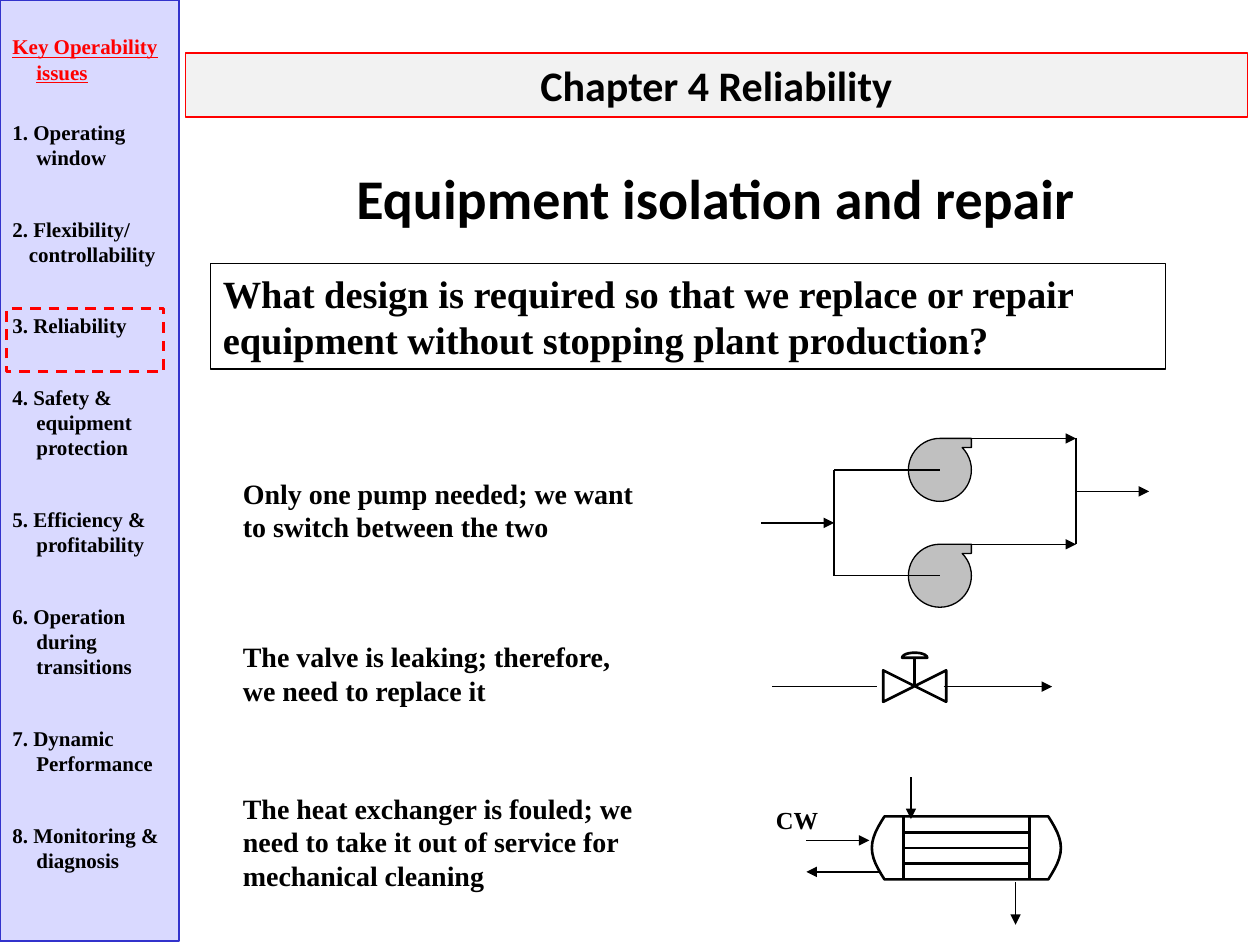
import collections
import math

import lxml.etree
import pptx
import pptx.dml.color
import pptx.enum.dml
import pptx.enum.shapes
import pptx.enum.text
import pptx.oxml.ns
import pptx.util

Inches = pptx.util.Inches
SHAPES = pptx.enum.shapes.MSO_SHAPE
SERIF, SANS = "Times New Roman", "Calibri"
BLACK, RED, WHITE = "000000", "FF0000", "FFFFFF"

# A region of the page, in inches
Box = collections.namedtuple("Box", "left top width height")


def color(hex_string):
    return pptx.dml.color.RGBColor.from_string(hex_string)


def style_outline(shape, fill, line, weight):
    shape.shadow.inherit = False
    if fill:
        shape.fill.solid()
        shape.fill.fore_color.rgb = color(fill)
    else:
        shape.fill.background()
    shape.line.color.rgb = color(line)
    shape.line.width = pptx.util.Pt(weight)


def add_preset(page, kind, box, fill=None, line=BLACK, weight=0.75):
    shape = page.shapes.add_shape(kind, *map(Inches, box))
    style_outline(shape, fill, line, weight)
    return shape


def add_outline(page, box, points, weight=1.5):
    """Draw a closed white outline; points are offsets from the box corner."""
    corners = [(Inches(box.left + x), Inches(box.top + y)) for x, y in points]
    builder = page.shapes.build_freeform(*corners[0])
    builder.add_line_segments(corners[1:], close=True)
    style_outline(builder.convert_to_shape(), WHITE, BLACK, weight)


def add_line(page, box, start_x, start_y, end_x, end_y, arrow=False, weight=0.75):
    """Draw a line between two offsets from the box corner."""
    line = page.shapes.add_connector(
        pptx.enum.shapes.MSO_CONNECTOR.STRAIGHT,
        Inches(box.left + start_x), Inches(box.top + start_y),
        Inches(box.left + end_x), Inches(box.top + end_y))
    line.line.color.rgb = color(BLACK)
    line.line.width = pptx.util.Pt(weight)
    if arrow:
        head = lxml.etree.SubElement(line.line._get_or_add_ln(), pptx.oxml.ns.qn("a:tailEnd"))
        head.set("type", "triangle")
    lxml.etree.SubElement(line._element.spPr, pptx.oxml.ns.qn("a:effectLst"))


def format_para(para, size, font, text_color=BLACK, align=pptx.enum.text.PP_ALIGN.LEFT):
    para.alignment = align
    for span in para.runs:
        span.font.size = pptx.util.Pt(size)
        span.font.name = font
        span.font.bold = True
        span.font.color.rgb = color(text_color)


def set_text(shape, text, size, font=SERIF, align=pptx.enum.text.PP_ALIGN.LEFT):
    frame = shape.text_frame
    frame.word_wrap = True
    frame.vertical_anchor = pptx.enum.text.MSO_ANCHOR.TOP
    frame.text = text
    format_para(frame.paragraphs[0], size, font, align=align)


def add_label(page, box, text, size, **style):
    set_text(page.shapes.add_textbox(*map(Inches, box)), text, size, **style)


def draw_sidebar(page, box):
    # Text, space before in points, left margin and first-line indent in inches
    issues = [
        ("Key Operability issues", 0, 0.19, -0.19),
        ("1. Operating window", 20, 0.19, -0.19),
        ("2. Flexibility/", 26.5, 0.19, -0.19),
        ("controllability", 0, 0.13, 0),
    ] + [(text, 26.5, 0.19, -0.19) for text in (
        "3. Reliability", "4. Safety & equipment protection",
        "5. Efficiency & profitability", "6. Operation during transitions",
        "7. Dynamic Performance", "8. Monitoring & diagnosis")]
    panel = add_preset(page, SHAPES.RECTANGLE, box, "D9D9FF", "3333CC")
    frame = panel.text_frame
    frame.word_wrap = True
    frame.vertical_anchor = pptx.enum.text.MSO_ANCHOR.TOP
    frame.margin_top = Inches(0.27)
    frame.text = "\n".join(text for text, *_ in issues)
    for para, (_, gap, margin, indent) in zip(frame.paragraphs, issues):
        format_para(para, 12, SERIF)
        para.space_before = pptx.util.Pt(gap)
        properties = para._p.get_or_add_pPr()
        properties.set("marL", str(Inches(margin)))
        properties.set("indent", str(Inches(indent)))
    heading = frame.paragraphs[0].runs[0].font
    heading.color.rgb = color(RED)
    heading.underline = True

    # Dashed frame around the current chapter
    marker = add_preset(page, SHAPES.RECTANGLE,
                        Box(box.left + 0.05, box.top + 2.45, 1.25, 0.5), None, RED, 1.5)
    marker.line.dash_style = pptx.enum.dml.MSO_LINE.DASH


def draw_header(page, box):
    center = pptx.enum.text.PP_ALIGN.CENTER
    banner = add_preset(page, SHAPES.RECTANGLE, box._replace(height=0.51), "F2F2F2", RED)
    set_text(banner, "Chapter 4 Reliability", 24, SANS, center)
    add_label(page, Box(box.left + 1, box.top + 0.83, 6.42, 0.64),
              "Equipment isolation and repair", 32, font=SANS, align=center)


def draw_pumps(page, box):
    for top in (0, 0.84):
        pump = add_preset(page, SHAPES.FLOWCHART_SEQUENTIAL_ACCESS_STORAGE,
                          Box(box.left + 1.17, box.top + top, 0.5, 0.5), "C0C0C0")
        pump._element.spPr.xfrm.set("flipV", "1")
        add_line(page, box, 0.58, top + 0.25, 1.42, top + 0.25)
        add_line(page, box, 1.67, top, 2.5, top, arrow=True)
    # Shared inlet and outlet
    add_line(page, box, 0.58, 1.09, 0.58, 0.25)
    add_line(page, box, 0, 0.67, 0.58, 0.67, arrow=True)
    add_line(page, box, 2.5, 0.84, 2.5, 0)
    add_line(page, box, 2.5, 0.42, 3.08, 0.42, arrow=True)


def draw_valve(page, box):
    # Body, dome and stem
    add_outline(page, box, [(0.88, 0.14), (1.38, 0.39), (1.38, 0.14), (0.88, 0.39)])
    angles = [math.pi * step / 11 for step in range(12)]
    add_outline(page, box, [(1.13 - 0.1 * math.cos(angle), 0.04 - 0.04 * math.sin(angle))
                            for angle in angles])
    add_line(page, box, 1.13, 0.26, 1.13, 0.04, weight=1.5)
    # Pipe
    add_line(page, box, 0, 0.27, 0.83, 0.27)
    add_line(page, box, 1.36, 0.27, 2.22, 0.27, arrow=True)


def draw_exchanger(page, box):
    # Shell with a rounded cap at each end
    steps = [step / 12 for step in range(13)]
    left_cap = [(0.96 - 0.1 * math.sin(math.pi * t), 0.31 + 0.5 * t) for t in steps]
    right_cap = [(2.26 + 0.1 * math.sin(math.pi * t), 0.81 - 0.5 * t) for t in steps]
    add_outline(page, box, left_cap + right_cap)
    # Tube sheets and tubes
    for x in (1.11, 2.11):
        add_line(page, box, x, 0.31, x, 0.81, weight=1.5)
    for row in (1, 2, 3):
        y = 0.31 + 0.125 * row
        add_line(page, box, 1.11, y, 2.11, y, weight=1.5)
    # Cooling water and process streams
    add_label(page, Box(box.left, box.top + 0.17, 0.67, 0.33), "CW", 14)
    for stream in ((0.34, 0.5, 0.84, 0.5), (0.92, 0.75, 0.34, 0.75),
                   (1.17, 0, 1.17, 0.33), (2, 0.83, 2, 1.17)):
        add_line(page, box, *stream, arrow=True)


def draw_case(page, box, text, draw_diagram, diagram_box):
    add_label(page, box, text, 16)
    draw_diagram(page, diagram_box)


def main():
    deck = pptx.Presentation()
    deck.slide_width, deck.slide_height = Inches(10), Inches(7.5)
    page = deck.slides.add_slide(deck.slide_layouts[6])

    question = add_preset(page, SHAPES.RECTANGLE, Box(1.67, 2.09, 7.58, 0.84))
    set_text(question, "What design is required so that we replace or repair "
                       "equipment without stopping plant production?", 22)
    draw_case(page, Box(1.83, 3.73, 3.33, 0.64),
              "Only one pump needed; we want to switch between the two",
              draw_pumps, Box(6.04, 3.48, 3.08, 1.34))
    draw_case(page, Box(1.83, 5.03, 3.33, 0.64),
              "The valve is leaking; therefore, we need to replace it",
              draw_valve, Box(6.13, 5.18, 2.22, 0.39))
    draw_case(page, Box(1.83, 6.23, 3.33, 0.9),
              "The heat exchanger is fouled; we need to take it out of service "
              "for mechanical cleaning",
              draw_exchanger, Box(6.06, 6.17, 2.36, 1.17))
    draw_sidebar(page, Box(0, 0, 1.42, 7.47))
    draw_header(page, Box(1.47, 0.42, 8.43, 1.47))
    deck.save("out.pptx")


if __name__ == "__main__":
    main()
